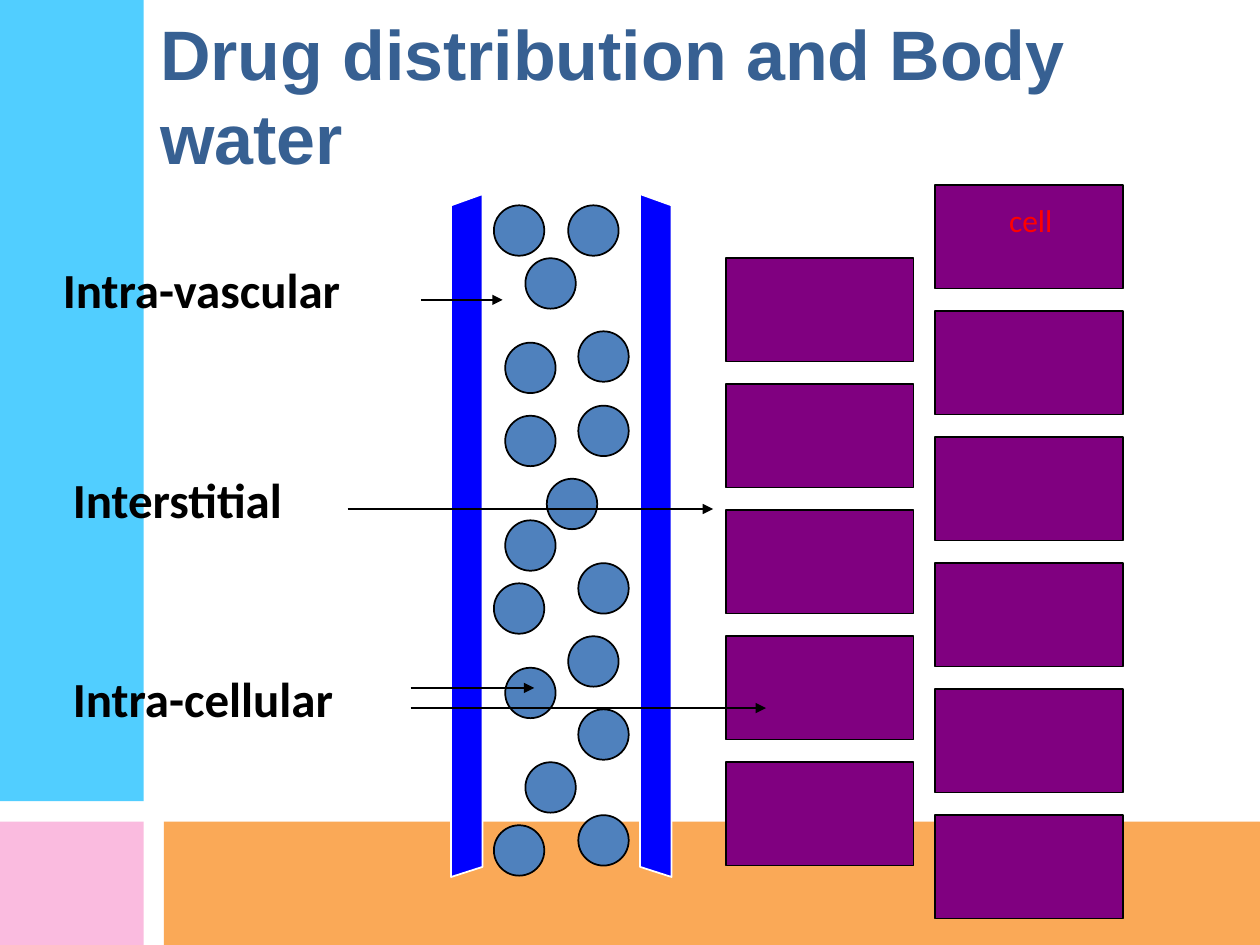
from pptx import Presentation
from pptx.dml.color import RGBColor
from pptx.enum.shapes import MSO_CONNECTOR, MSO_SHAPE
from pptx.enum.text import MSO_ANCHOR, MSO_AUTO_SIZE, PP_ALIGN
from pptx.oxml.ns import qn
from pptx.util import Inches, Pt
from lxml.etree import SubElement

TITLE = "Drug distribution and Body water"
BANDS = [
    (1.3, 6.52, 8.7, 0.98, "F9942E"),
    (0, 6.52, 1.14, 0.98, "F9ABD7"),
    (0, 0, 1.14, 6.36, "26C2FF"),
]
LABELS = [  # text, left, top, width, height, size, bold, colour
    ("Intra-vascular", 0.4, 2.01, 2.78, 0.57, 28, True, "000000"),
    ("Interstitial", 0.48, 3.68, 2.08, 0.57, 28, True, "000000"),
    ("Intra-cellular", 0.48, 5.26, 2.56, 0.57, 28, True, "000000"),
    ("cell", 7.91, 1.55, 0.55, 0.4, 18, False, "FF0000"),
]
WALLS = [(3.83, 3.58), (5.08, 5.33)]  # x of the high edge, x of the low edge
CELLS = [(5.76, 2.05, 5), (7.42, 1.47, 6)]  # left, first top, count
DROPS = [
    (3.92, 1.63), (4.51, 1.63), (4.17, 2.05), (4.59, 2.63), (4.01, 2.72),
    (4.59, 3.22), (4.01, 3.3), (4.34, 3.8), (4.01, 4.13), (4.59, 4.47),
    (3.92, 4.63), (4.51, 5.05), (4.01, 5.3), (4.59, 5.63), (4.17, 6.05),
    (4.59, 6.47), (3.92, 6.55),
]
ARROWS = [(3.34, 3.99, 2.38), (2.76, 5.66, 4.04),
          (3.26, 4.24, 5.46), (3.26, 6.08, 5.62)]  # from x, to x, y


def rgb(code):
    return RGBColor.from_string(code)


def paint(shape, fill, line=None):
    shape.shadow.inherit = False
    shape.fill.solid()
    shape.fill.fore_color.rgb = rgb(fill)
    if line:
        shape.line.color.rgb = rgb(line)
        shape.line.width = Pt(1)
    else:
        shape.line.fill.background()


def add_box(kind, x, y, w, h, fill, line=None):
    shape = shapes.add_shape(kind, Inches(x), Inches(y), Inches(w), Inches(h))
    paint(shape, fill, line)
    return shape


def style(para, size, face, bold, color):
    for run in para.runs:
        run.font.size = Pt(size)
        run.font.name = face
        run.font.bold = bold
        run.font.color.rgb = rgb(color)


def add_label(text, x, y, w, h, size, bold, color):
    box = shapes.add_textbox(Inches(x), Inches(y), Inches(w), Inches(h))
    frame = box.text_frame
    frame.word_wrap = False
    frame.auto_size = MSO_AUTO_SIZE.SHAPE_TO_FIT_TEXT
    frame.text = text
    style(frame.paragraphs[0], size, "Calibri", bold, color)


def add_wall(high, low):
    points = [(high, 6.88), (high, 1.54), (low, 1.63), (low, 6.96)]
    points = [(Inches(x), Inches(y)) for x, y in points]
    path = shapes.build_freeform(*points[0])
    path.add_line_segments(points[1:], close=True)
    paint(path.convert_to_shape(), "0000FF", "FFFFFF")


def add_arrow(start, end, y):
    line = shapes.add_connector(MSO_CONNECTOR.STRAIGHT, Inches(start),
                                Inches(y), Inches(end), Inches(y))
    line.line.color.rgb = rgb("000000")
    line.line.width = Pt(1)
    SubElement(line.line._get_or_add_ln(), qn("a:tailEnd"), type="triangle")
    SubElement(line._element.spPr, qn("a:effectLst"))


def set_title(title):
    title.left, title.top = Inches(1.17), Inches(0.75)
    title.width, title.height = Inches(8.5), Inches(0.77)
    frame = title.text_frame
    frame.text = TITLE
    frame.word_wrap = True
    frame.auto_size = MSO_AUTO_SIZE.NONE
    frame.vertical_anchor = MSO_ANCHOR.BOTTOM
    frame.margin_bottom = Inches(0.1)
    para = frame.paragraphs[0]
    para.alignment = PP_ALIGN.LEFT
    style(para, 40, "Arial", True, "376092")


deck = Presentation()
deck.slide_width, deck.slide_height = Inches(10), Inches(7.5)
shapes = deck.slides.add_slide(deck.slide_layouts[5]).shapes
set_title(shapes.title)

for *place, color in BANDS:
    band = add_box(MSO_SHAPE.RECTANGLE, *place, color)
    tint = band.fill._xPr.find(qn("a:solidFill"))[0]
    SubElement(tint, qn("a:alpha"), val="80000")
for wall in WALLS:
    add_wall(*wall)
for x, top, count in CELLS:
    for row in range(count):
        add_box(MSO_SHAPE.RECTANGLE, x, top + row, 1.49, 0.82,
                "800080", "000000")
for x, y in DROPS:
    add_box(MSO_SHAPE.OVAL, x, y, 0.4, 0.4, "4F81BD", "000000")
for arrow in ARROWS:
    add_arrow(*arrow)
for label in LABELS:
    add_label(*label)

deck.save("out.pptx")
